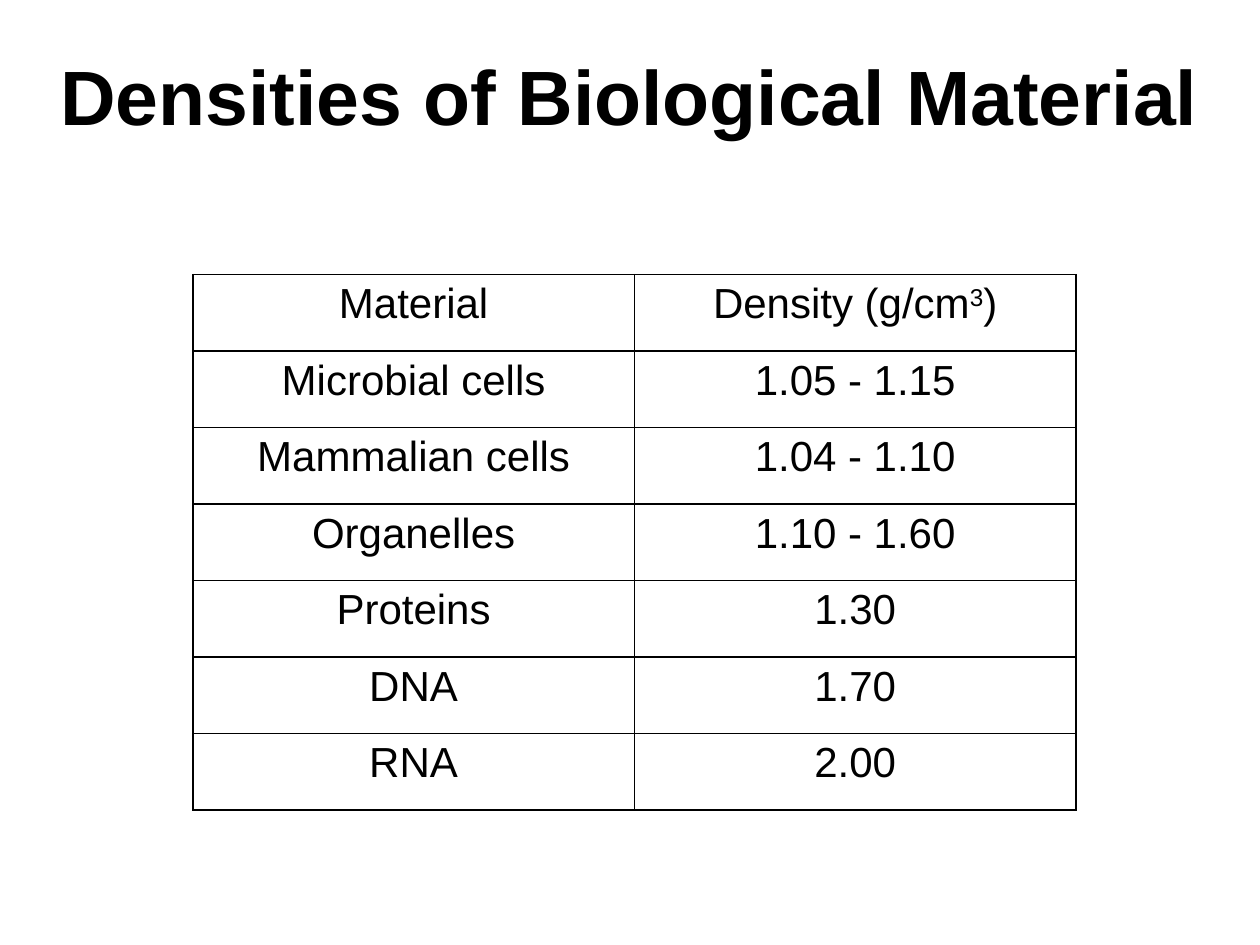
from dataclasses import dataclass

from lxml import etree
from pptx import Presentation
from pptx.dml.color import RGBColor
from pptx.enum.text import MSO_ANCHOR, PP_ALIGN
from pptx.oxml.ns import qn
from pptx.util import Inches, Pt

CENTER = PP_ALIGN.CENTER
MIDDLE = MSO_ANCHOR.MIDDLE
TOP = MSO_ANCHOR.TOP
TITLE_ONLY = 5


@dataclass(frozen=True)
class Theme:
    font: str = "Arial"
    ink: str = "000000"
    title_size: int = 44
    table_size: int = 24
    border_width: int = 1


THEME = Theme()

TITLE = "Densities of Biological Material"
# A cell is a list of (text, is superscript) pieces or a plain string.
DENSITIES = [
    ("Material", [("Density (g/cm", False), ("3", True), (")", False)]),
    ("Microbial cells", "1.05 - 1.15"),
    ("Mammalian cells", "1.04 - 1.10"),
    ("Organelles", "1.10 - 1.60"),
    ("Proteins", "1.30"),
    ("DNA", "1.70"),
    ("RNA", "2.00"),
]


def write_text(text_frame, text, *, size, bold=False, align=CENTER):
    paragraph = text_frame.paragraphs[0]
    paragraph.alignment = align
    pieces = [(text, False)] if isinstance(text, str) else text
    for piece, superscript in pieces:
        run = paragraph.add_run()
        run.text = piece
        run.font.name = THEME.font
        run.font.size = Pt(size)
        run.font.bold = bold
        run.font.color.rgb = RGBColor.from_string(THEME.ink)
        if superscript:
            run.font._element.set("baseline", "30000")


def set_borders(cell):
    properties = cell._tc.get_or_add_tcPr()
    for side in ("a:lnL", "a:lnR", "a:lnT", "a:lnB"):
        line = etree.SubElement(properties, qn(side), w=str(Pt(THEME.border_width)))
        fill = etree.SubElement(line, qn("a:solidFill"))
        etree.SubElement(fill, qn("a:srgbClr"), val=THEME.ink)


def place_title(slide, left, top, width, height):
    title = slide.shapes.title
    title.left, title.top, title.width, title.height = left, top, width, height
    title.text_frame.vertical_anchor = MIDDLE
    write_text(title.text_frame, TITLE, size=THEME.title_size, bold=True)


def place_density_table(slide, left, top, width, height):
    row_count, column_count = len(DENSITIES), len(DENSITIES[0])
    table = slide.shapes.add_table(
        row_count, column_count, left, top, width, height
    ).table
    table.first_row = False
    table.horz_banding = False
    for row, values in enumerate(DENSITIES):
        for column, value in enumerate(values):
            cell = table.cell(row, column)
            cell.vertical_anchor = TOP
            set_borders(cell)
            cell.fill.background()
            write_text(cell.text_frame, value, size=THEME.table_size)


def main():
    presentation = Presentation()
    presentation.slide_width = Inches(10)
    presentation.slide_height = Inches(7.5)
    slide = presentation.slides.add_slide(presentation.slide_layouts[TITLE_ONLY])
    place_title(slide, Inches(0.25), Inches(0.25), Inches(9.5), Inches(1))
    place_density_table(slide, Inches(1.53), Inches(2.18), Inches(7.01), Inches(4.25))
    presentation.save("out.pptx")


if __name__ == "__main__":
    main()
